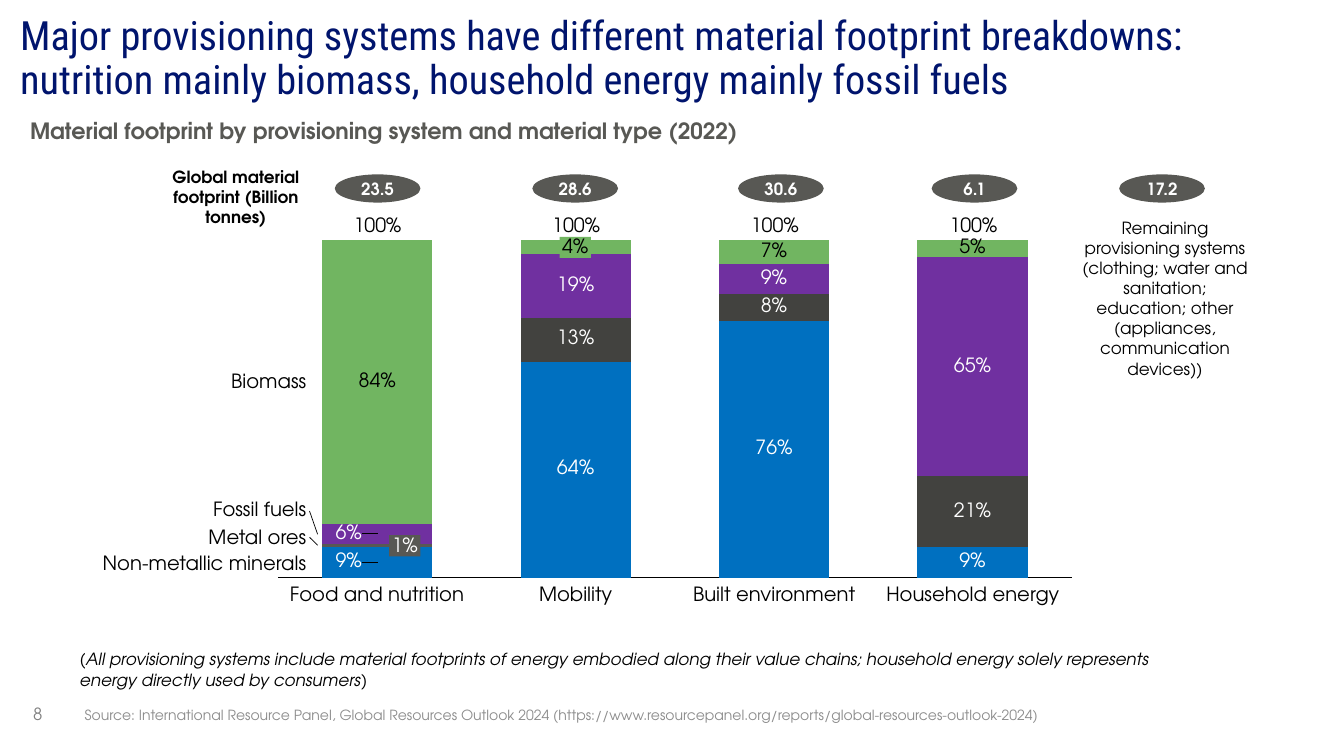
from pptx import Presentation
from pptx.chart.data import CategoryChartData
from pptx.dml.color import RGBColor
from pptx.enum.chart import XL_CHART_TYPE as ChartType, XL_LABEL_POSITION as LabelPosition
from pptx.enum.chart import XL_TICK_LABEL_POSITION as TickLabels, XL_TICK_MARK as TickMark
from pptx.enum.shapes import MSO_CONNECTOR as Connector, MSO_SHAPE as Shape
from pptx.enum.text import MSO_ANCHOR as Anchor, PP_ALIGN as Align
from pptx.oxml import parse_xml
from pptx.oxml.ns import nsdecls, qn
from pptx.util import Inches, Pt

COLORS = {
    "title": "00146D", "black": "000000", "white": "FFFFFF", "gray": "585854",
    "number": "808080", "source": "8C8C8C", "minerals": "0070C0",
    "metals": "42423F", "fossil": "7030A0", "biomass": "71B561",
}
BODY_FONT = "TeX Gyre Adventor"
PERCENT = '0"%"'


def rgb(name):
    return RGBColor.from_string(COLORS[name])


def add_text(at, texts, size=14, color="black", align=Align.CENTER, anchor=Anchor.MIDDLE,
             bold=False, font=BODY_FONT, spacing=None, wrap=True, inset=0,
             shape=None, fill=None, italic=()):
    place = [Inches(length) for length in at]
    if shape is None:
        box = page.shapes.add_textbox(*place)
    else:
        box = page.shapes.add_shape(shape, *place)
        box.shadow.inherit = False
        box.fill.solid()
        box.fill.fore_color.rgb = rgb(fill)
        box.line.fill.background()
    frame = box.text_frame
    frame.word_wrap = wrap
    frame.vertical_anchor = anchor
    frame.margin_left = frame.margin_right = Inches(inset)
    frame.margin_top = frame.margin_bottom = Inches(inset)
    for row, spans in enumerate(texts):
        para = frame.paragraphs[0] if row == 0 else frame.add_paragraph()
        para.alignment = align
        if spacing:
            para.line_spacing = spacing
        for order, words in enumerate(spans):
            span = para.add_run()
            span.text = words
            span.font.name = font
            span.font.size = Pt(size)
            span.font.bold = bold
            span.font.italic = order in italic
            span.font.color.rgb = rgb(color)


deck = Presentation()
deck.slide_width, deck.slide_height = Inches(13.33), Inches(7.5)
page = deck.slides.add_slide(deck.slide_layouts[6])

add_text((0.05, 6.82, 0.65, 0.52), [["8"]], 12, "number", inset=0.08)
add_text((0.2, 0.2, 12.94, 0.78), [[
    "Major provisioning systems have different material footprint breakdowns: "
    "nutrition mainly biomass, household energy mainly fossil fuels"]],
    28.8, "title", Align.LEFT, font="Roboto Condensed", spacing=0.9)
add_text((0.2, 1.1, 12.25, 0.4),
         [["Material footprint by provisioning system and material type (2022)"]],
         16, "gray", Align.LEFT, bold=True, inset=0.1)
add_text((0.84, 6.91, 10.35, 0.39), [[
    "Source: International Resource Panel, Global Resources Outlook 2024 "
    "(https://www.resourcepanel.org/reports/global-resources-outlook-2024)"]],
    10, "source", Align.LEFT, spacing=0.9)

materials = [
    ("Series 1", (9, 64, 76, 9), "minerals", "white"),
    ("Series 2", (1, 13, 8, 21), "metals", "white"),
    ("Series 3", (6, 19, 9, 65), "fossil", "white"),
    ("Series 4", (84, 4, 7, 5), "biomass", "black"),
]
shares = CategoryChartData(number_format=PERCENT)
shares.categories = ["1", "2", "3", "4"]
for name, values, color, label_color in materials:
    shares.add_series(name, values)
chart = page.shapes.add_chart(
    ChartType.COLUMN_STACKED, Inches(2.67), Inches(2.05), Inches(8.05), Inches(4.02), shares).chart
chart.has_legend = False
chart.has_title = False
chart.font.name = BODY_FONT
chart.font.size = Pt(10)
chart.font.color.rgb = rgb("black")

category_axis, value_axis = chart.category_axis, chart.value_axis
category_axis.tick_label_position = TickLabels.NONE
category_axis.major_tick_mark = TickMark.NONE
category_axis.format.line.color.rgb = rgb("black")
category_axis.format.line.width = Pt(0.75)
value_axis.minimum_scale, value_axis.maximum_scale = 0, 100
value_axis.has_major_gridlines = False
value_axis.visible = False

plot = chart.plots[0]
plot.gap_width, plot.overlap = 80, 100
plot.vary_by_categories = False
for series, (name, values, color, label_color) in zip(plot.series, materials):
    series.format.fill.solid()
    series.format.fill.fore_color.rgb = rgb(color)
    labels = series.data_labels
    labels.show_value = True
    labels.number_format = PERCENT
    labels.number_format_is_linked = False
    labels.position = LabelPosition.CENTER
    labels.font.name = BODY_FONT
    labels.font.size = Pt(14)
    labels.font.color.rgb = rgb(label_color)

for order, point in ((1, 0), (3, 1)):
    plot.series[order].data_labels._element.insert(0, parse_xml(
        f'<c:dLbl {nsdecls("c")}><c:idx val="{point}"/><c:delete val="1"/></c:dLbl>'))
for order in (0, 2):
    label = plot.series[order].points[0].data_label
    label.font.name = BODY_FONT
    label.font.size = Pt(14)
    label.font.color.rgb = rgb("white")
    index = plot.series[order].data_labels._element.find(qn("c:dLbl")).find(qn("c:idx"))
    index.addnext(parse_xml(
        f'<c:numFmt {nsdecls("c")} formatCode="0&quot;%&quot;" sourceLinked="0"/>'))
    index.addnext(parse_xml(
        f'<c:layout {nsdecls("c")}><c:manualLayout><c:x val="-0.035"/><c:y val="0"/>'
        '</c:manualLayout></c:layout>'))
metal_point = plot.series[1].points[0].format.fill
metal_point.solid()
metal_point.fore_color.rgb = rgb("gray")

plot_area = chart._chartSpace.chart.plotArea
for old_layout in plot_area.findall(qn("c:layout")):
    plot_area.remove(old_layout)
plot_area.insert(0, parse_xml(
    f'<c:layout {nsdecls("c")}><c:manualLayout><c:layoutTarget val="inner"/>'
    '<c:xMode val="edge"/><c:yMode val="edge"/><c:x val="0.011"/><c:y val="0.083"/>'
    '<c:w val="0.978"/><c:h val="0.833"/></c:manualLayout></c:layout>'))

for top, bottom in ((5.07, 5.3), (5.33, 5.41)):
    leader = page.shapes.add_connector(
        Connector.STRAIGHT, Inches(3.07), Inches(top), Inches(3.15), Inches(bottom))
    leader.line.color.rgb = rgb("black")
    leader.line.width = Pt(0.5)
    leader._element.spPr.append(parse_xml(f'<a:effectLst {nsdecls("a")}/>'))

for left, top, share, fill, color in (
        (3.86, 5.31, "1%", "gray", "white"), (5.55, 2.35, "4%", "biomass", "black")):
    add_text((left, top, 0.31, 0.21), [[share]], color=color, spacing=0.9,
             wrap=False, shape=Shape.RECTANGLE, fill=fill)

systems = ["Food and nutrition", "Mobility", "Built environment", "Household energy"]
for column, system in enumerate(systems):
    center = 3.74 + 1.97 * column
    add_text((center - 0.87, 5.8, 1.74, 0.21), [[system]],
             anchor=Anchor.TOP, spacing=0.9, wrap=False)
    add_text((center - 0.26, 2.14, 0.53, 0.21), [["100%"]],
             anchor=Anchor.BOTTOM, spacing=0.9, wrap=False)

for top, material in ((3.69, "Biomass"), (4.96, "Fossil fuels"),
                      (5.23, "Metal ores"), (5.49, "Non-metallic minerals")):
    add_text((1.01, top, 2.03, 0.21), [[material]], align=Align.RIGHT,
             spacing=0.9, wrap=False)

add_text((1.52, 1.62, 1.64, 0.67), [["Global material footprint (Billion tonnes)"]],
         12, bold=True, inset=0.08)
for left, tonnes in ((3.32, "23.5"), (5.28, "28.6"), (7.32, "30.6"), (9.24, "6.1"), (11.1, "17.2")):
    add_text((left, 1.73, 0.85, 0.28), [[tonnes]], 12, "white", bold=True,
             shape=Shape.OVAL, fill="gray")
add_text((10.6, 2.35, 1.91, 1.21), [
    ["Remaining provisioning systems"],
    ["(clothing; water and sanitation; education; other (appliances, communication devices))"]],
    12, inset=0.08)
add_text((0.79, 6.44, 10.86, 0.4), [[
    "(",
    "All provisioning systems include material footprints of energy embodied along their "
    "value chains; household energy solely represents energy directly used by consumers",
    ")"]], 12, align=Align.LEFT, anchor=Anchor.TOP, italic=(1,))

deck.save("out.pptx")
